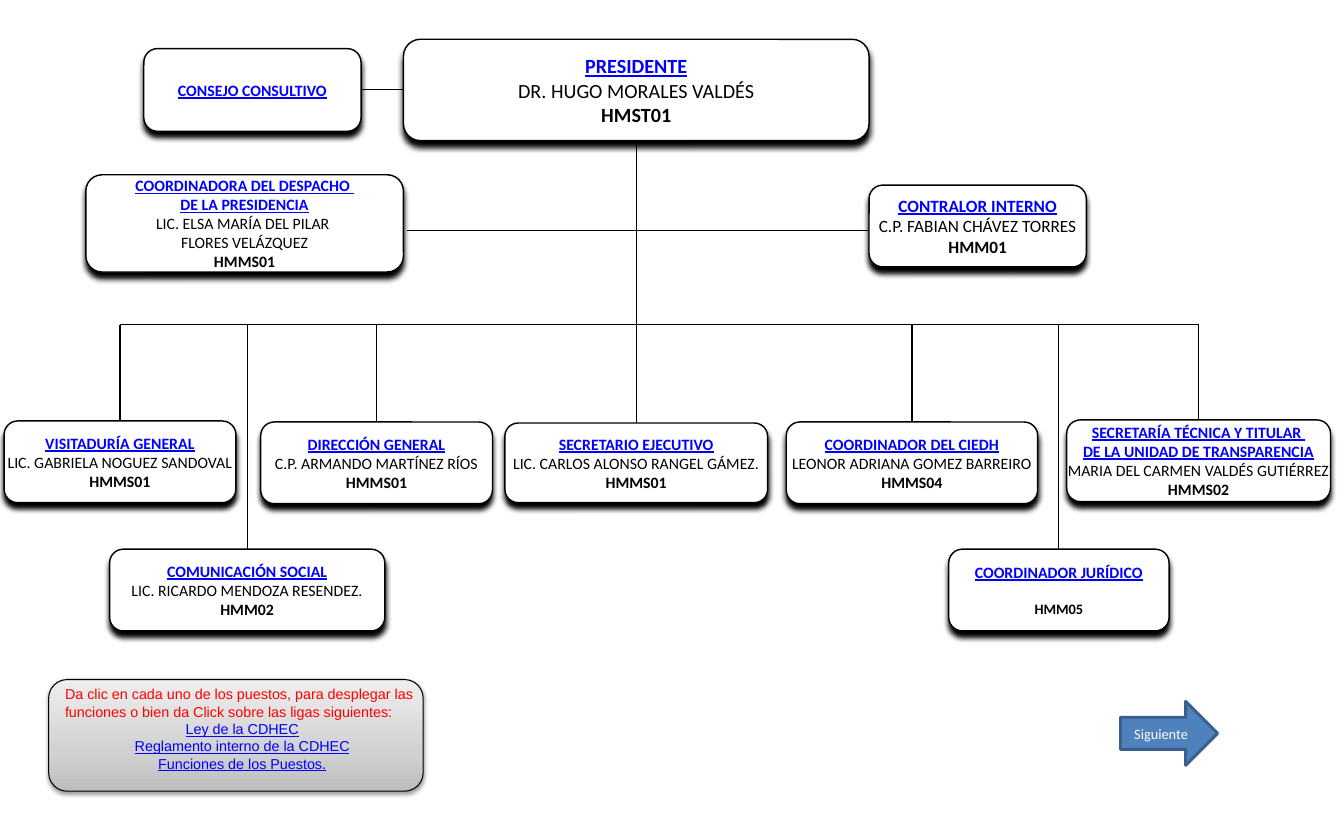
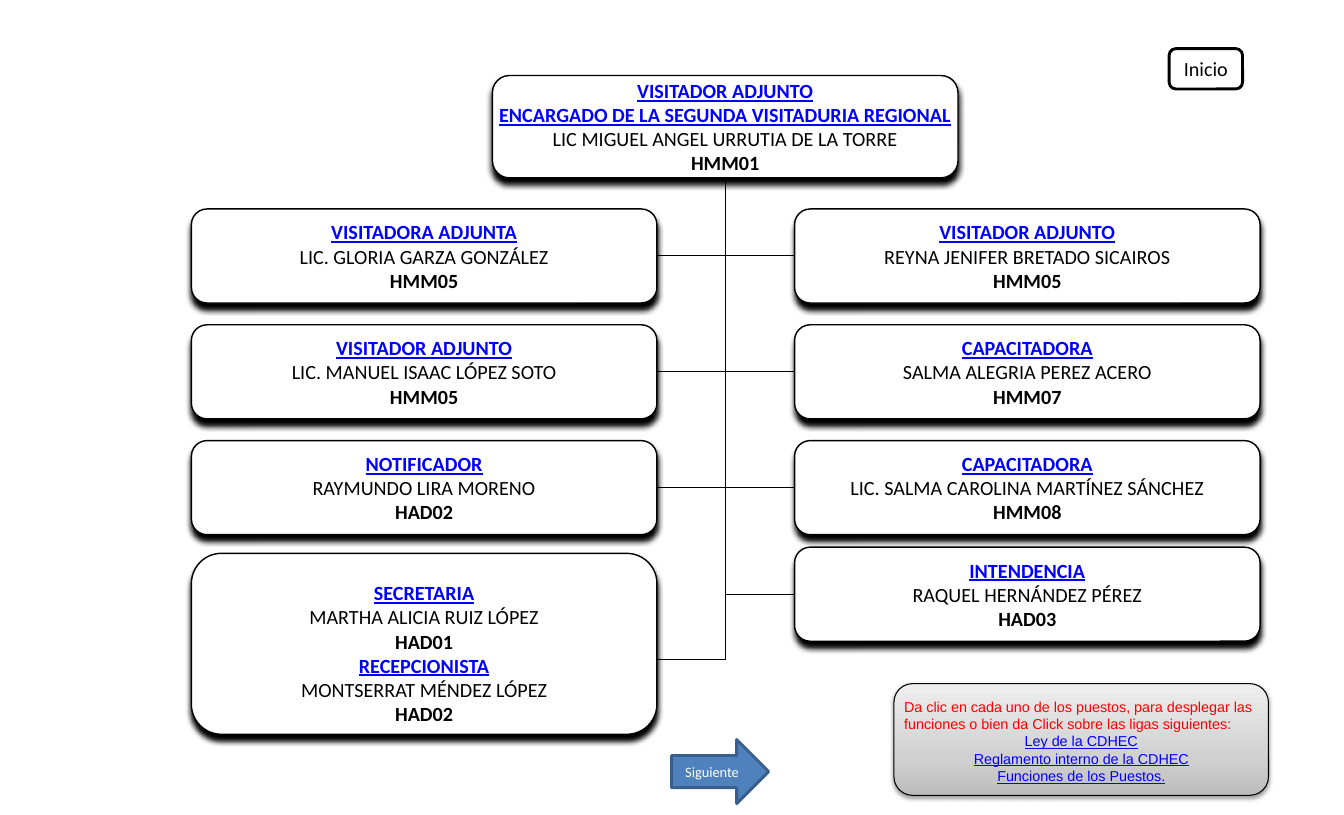
import copy

import pptx
import pptx.dml.color
import pptx.enum.shapes
import pptx.enum.text
import pptx.oxml
import pptx.oxml.ns
import pptx.util

Inches, Pt = pptx.util.Inches, pptx.util.Pt
RGBColor = pptx.dml.color.RGBColor
SHAPE = pptx.enum.shapes.MSO_SHAPE
PP_ALIGN = pptx.enum.text.PP_ALIGN
qn = pptx.oxml.ns.qn

BLACK = RGBColor(0x00, 0x00, 0x00)
WHITE = RGBColor(0xFF, 0xFF, 0xFF)
LINK_BLUE = RGBColor(0x00, 0x00, 0xFF)
NOTICE_RED = RGBColor(0xFF, 0x00, 0x00)
ARROW_FILL = RGBColor(0x4F, 0x81, 0xBD)
ARROW_EDGE = RGBColor(0x3A, 0x5F, 0x8C)
PANEL_STOPS = [(0, RGBColor(0xBD, 0xBD, 0xBD)),
               (0.35, RGBColor(0xD1, 0xD1, 0xD1)),
               (1, RGBColor(0xEE, 0xEE, 0xEE))]

TOP, LEFT, BOTTOM, RIGHT = 0, 1, 2, 3
# A group in a box is post, person, grade: (color, bold, underline)
ROLE_STYLES = [(LINK_BLUE, True, True), (BLACK, False, False), (BLACK, True, False)]
NOTICE = ("Da clic en cada uno de los puestos, para desplegar las funciones "
          "o bien da Click sobre las ligas siguientes:")
LINKS = ["Ley de la CDHEC", "Reglamento interno de la CDHEC", "Funciones de los Puestos."]


class OrgChart:
    def __init__(self):
        self.deck = pptx.Presentation()
        self.deck.slide_width, self.deck.slide_height = Inches(12.99), Inches(7.88)
        self.shapes = None

    def new_slide(self):
        self.shapes = self.deck.slides.add_slide(self.deck.slide_layouts[6]).shapes

    def add_text(self, paragraph, text, size, color, font="Calibri", bold=False,
                 underline=False, align=PP_ALIGN.CENTER):
        paragraph.alignment = align
        run = paragraph.add_run()
        run.text = text
        run.font.name, run.font.size = font, Pt(size)
        run.font.bold, run.font.underline = bold, underline
        run.font.color.rgb = color

    def outline(self, kind, left, top, width, height, edge, edge_width, fill=None):
        shape = self.shapes.add_shape(kind, Inches(left), Inches(top),
                                      Inches(width), Inches(height))
        shape.shadow.inherit = False
        shape.line.color.rgb, shape.line.width = edge, Pt(edge_width)
        if fill is not None:
            shape.fill.solid()
            shape.fill.fore_color.rgb = fill
        return shape

    def drop_shadow(self, shape, alpha, blur, distance):
        shape._element.spPr.find(qn("a:effectLst")).append(pptx.oxml.parse_xml(
            f'<a:outerShdw {pptx.oxml.ns.nsdecls("a")} blurRad="{Pt(blur)}" '
            f'dist="{Pt(distance)}" dir="5400000" rotWithShape="0">'
            f'<a:srgbClr val="000000"><a:alpha val="{alpha * 1000}"/></a:srgbClr>'
            '</a:outerShdw>'))

    def box(self, left, top, width, height, size, *groups, code_size=None, extra_top=0):
        """Draw a post box; each group is (post, person, grade), and \\n splits lines."""
        shape = self.outline(SHAPE.ROUNDED_RECTANGLE, left, top, width, height, BLACK, 1, WHITE)
        self.drop_shadow(shape, 100, 4, 4)
        frame = shape.text_frame
        frame.word_wrap = False
        frame.vertical_anchor = pptx.enum.text.MSO_ANCHOR.MIDDLE
        frame.margin_left = frame.margin_right = Inches(0.17)
        frame.margin_top, frame.margin_bottom = Inches(0.09 + extra_top), Inches(0.09)
        paragraph = frame.paragraphs[0]
        for group in groups:
            for role, (text, (color, bold, underline)) in enumerate(zip(group, ROLE_STYLES)):
                for line in text.split("\n") if text else []:
                    if paragraph.runs:
                        paragraph = frame.add_paragraph()
                    line_size = code_size if role == 2 and code_size else size
                    self.add_text(paragraph, line, line_size, color, bold=bold,
                                  underline=underline)
                    if role == 2 and not group[1]:
                        paragraph.space_before = Pt(13)  # room for a vacant post
        return shape

    def line(self, start, end):
        """Join two ends, each an (x, y) point in inches or a (shape, side) pair."""
        joined = [not isinstance(point[0], (int, float)) for point in (start, end)]
        x1, y1 = (0, 0) if joined[0] else start
        x2, y2 = (0, 0) if joined[1] else end
        connector = self.shapes.add_connector(
            pptx.enum.shapes.MSO_CONNECTOR.STRAIGHT,
            Inches(x1), Inches(y1), Inches(x2), Inches(y2))
        if joined[0]:
            connector.begin_connect(*start)
        if joined[1]:
            connector.end_connect(*end)
        connector.line.color.rgb, connector.line.width = BLACK, Pt(0.75)
        connector._element.spPr.append(pptx.oxml.parse_xml(
            f'<a:effectLst {pptx.oxml.ns.nsdecls("a")}/>'))

    def links_panel(self, left, top, text_left, text_top):
        panel = self.outline(SHAPE.ROUNDED_RECTANGLE, left, top, 3.62, 1.08, BLACK, 0.75)
        panel.fill.gradient()
        panel.fill.gradient_angle = 90
        stop_list = panel._element.spPr.find(".//" + qn("a:gsLst"))
        stop_list.append(copy.deepcopy(stop_list[0]))
        for stop, (position, color) in zip(panel.fill.gradient_stops, PANEL_STOPS):
            stop.position, stop.color.rgb = position, color
        self.drop_shadow(panel, 38, 3.1, 1.6)

        frame = self.shapes.add_textbox(Inches(text_left), Inches(text_top),
                                        Inches(3.62), Inches(0.94)).text_frame
        frame.word_wrap = True
        frame.auto_size = pptx.enum.text.MSO_AUTO_SIZE.SHAPE_TO_FIT_TEXT
        self.add_text(frame.paragraphs[0], NOTICE, 10, NOTICE_RED, "Arial", align=PP_ALIGN.LEFT)
        for link in LINKS:
            self.add_text(frame.add_paragraph(), link, 10, LINK_BLUE, "Arial", underline=True)

    def button(self, kind, left, top, width, height, label, size, color, fill, edge):
        shape = self.outline(kind, left, top, width, height, edge, 2, fill)
        shape.text_frame.word_wrap = True
        shape.text_frame.vertical_anchor = pptx.enum.text.MSO_ANCHOR.MIDDLE
        self.add_text(shape.text_frame.paragraphs[0], label, size, color)

    def next_button(self, left, top):
        self.button(SHAPE.RIGHT_ARROW, left, top, 0.94, 0.62, "Siguiente", 10,
                    WHITE, ARROW_FILL, ARROW_EDGE)


def presidency_slide(chart):
    chart.new_slide()
    president = chart.box(3.9, 0.38, 4.5, 0.98, 14,
                          ("PRESIDENTE", "DR. HUGO MORALES VALDÉS", "HMST01"))
    council = chart.box(1.39, 0.47, 2.1, 0.8, 11, ("CONSEJO CONSULTIVO",))
    chart.box(0.83, 1.69, 3.07, 0.94, 11,
              ("COORDINADORA DEL DESPACHO \nDE LA PRESIDENCIA",
               "LIC. ELSA MARÍA DEL PILAR \nFLORES VELÁZQUEZ", "HMMS01"))
    chart.box(8.4, 1.79, 2.1, 0.79, 12,
              ("CONTRALOR INTERNO", "C.P. FABIAN CHÁVEZ TORRES", "HMM01"))
    secretary = chart.box(4.88, 4.09, 2.54, 0.77, 11,
                          ("SECRETARIO EJECUTIVO", "LIC. CARLOS ALONSO RANGEL GÁMEZ.",
                           "HMMS01"))

    areas = [
        (0.04, 4.07, 2.24, ("VISITADURÍA GENERAL", "LIC. GABRIELA NOGUEZ SANDOVAL", "HMMS01")),
        (1.06, 5.31, 2.66, ("COMUNICACIÓN SOCIAL", "LIC. RICARDO MENDOZA RESENDEZ.", "HMM02")),
        (2.52, 4.08, 2.24, ("DIRECCIÓN GENERAL", "C.P. ARMANDO MARTÍNEZ RÍOS", "HMMS01")),
        (7.6, 4.08, 2.43, ("COORDINADOR DEL CIEDH", "LEONOR ADRIANA GOMEZ BARREIRO",
                           "HMMS04")),
        (9.17, 5.31, 2.13, ("COORDINADOR JURÍDICO", "", "HMM05")),
        (10.31, 4.06, 2.55, ("SECRETARÍA TÉCNICA Y TITULAR \nDE LA UNIDAD DE TRANSPARENCIA",
                             "MARIA DEL CARMEN VALDÉS GUTIÉRREZ", "HMMS02")),
    ]
    bus_y = 3.14
    centers = [left + width / 2 for left, _, width, _ in areas]
    chart.line((centers[0], bus_y), (centers[-1], bus_y))
    for center, (left, top, width, group) in zip(centers, areas):
        area = chart.box(left, top, width, 0.79, 11, group,
                         code_size=None if group[1] else 10)
        chart.line((center, bus_y), (area, TOP))

    chart.line((council, RIGHT), (president, LEFT))
    chart.line((president, BOTTOM), (secretary, TOP))
    chart.line((3.93, 2.23), (8.4, 2.23))
    chart.links_panel(0.47, 6.57, 0.53, 6.58)
    chart.next_button(10.83, 6.78)


def regional_slide(chart):
    chart.new_slide()
    left_x, right_x, width, height = 1.85, 7.68, 4.5, 0.91
    trunk_x, trunk_end = 7.01, 6.38
    head = chart.box(4.76, 0.73, width, 0.99, 14,
                     ("VISITADOR ADJUNTO\nENCARGADO DE LA SEGUNDA VISITADURIA REGIONAL",
                      "LIC MIGUEL ANGEL URRUTIA DE LA TORRE", "HMM01"))
    rows = [
        (("VISITADORA ADJUNTA", "LIC. GLORIA GARZA GONZÁLEZ", "HMM05"),
         ("VISITADOR ADJUNTO", "REYNA JENIFER BRETADO SICAIROS", "HMM05")),
        (("VISITADOR ADJUNTO", "LIC. MANUEL ISAAC LÓPEZ SOTO", "HMM05"),
         ("CAPACITADORA", "SALMA ALEGRIA PEREZ ACERO", "HMM07")),
        (("NOTIFICADOR", "RAYMUNDO LIRA MORENO", "HAD02"),
         ("CAPACITADORA", "LIC. SALMA CAROLINA MARTÍNEZ SÁNCHEZ", "HMM08")),
    ]
    for row, (left_post, right_post) in enumerate(rows):
        top = 2.02 + 1.12 * row
        left_box = chart.box(left_x, top, width, height, 14, left_post)
        right_box = chart.box(right_x, top, width, height, 14, right_post)
        chart.line((left_box, RIGHT), (right_box, LEFT))

    chart.box(left_x, 5.35, width, 1.75, 14,
              ("SECRETARIA", "MARTHA ALICIA RUIZ LÓPEZ", "HAD01"),
              ("RECEPCIONISTA", "MONTSERRAT MÉNDEZ LÓPEZ", "HAD02"), extra_top=0.18)
    cleaning_top = 5.29
    cleaning = chart.box(right_x, cleaning_top, width, height, 14,
                         ("INTENDENCIA", "RAQUEL HERNÁNDEZ PÉREZ", "HAD03"))
    chart.line((trunk_x, cleaning_top + height / 2), (cleaning, LEFT))
    chart.line((head, BOTTOM), (trunk_x, trunk_end))
    chart.line((trunk_x, trunk_end), (left_x + width, trunk_end))

    chart.button(SHAPE.ROUNDED_RECTANGLE, 11.3, 0.47, 0.71, 0.39, "Inicio", 14,
                 BLACK, WHITE, BLACK)
    chart.links_panel(8.64, 6.61, 8.64, 6.7)
    chart.next_button(6.49, 7.15)


def main():
    chart = OrgChart()
    presidency_slide(chart)
    regional_slide(chart)
    chart.deck.save("out.pptx")


if __name__ == "__main__":
    main()
